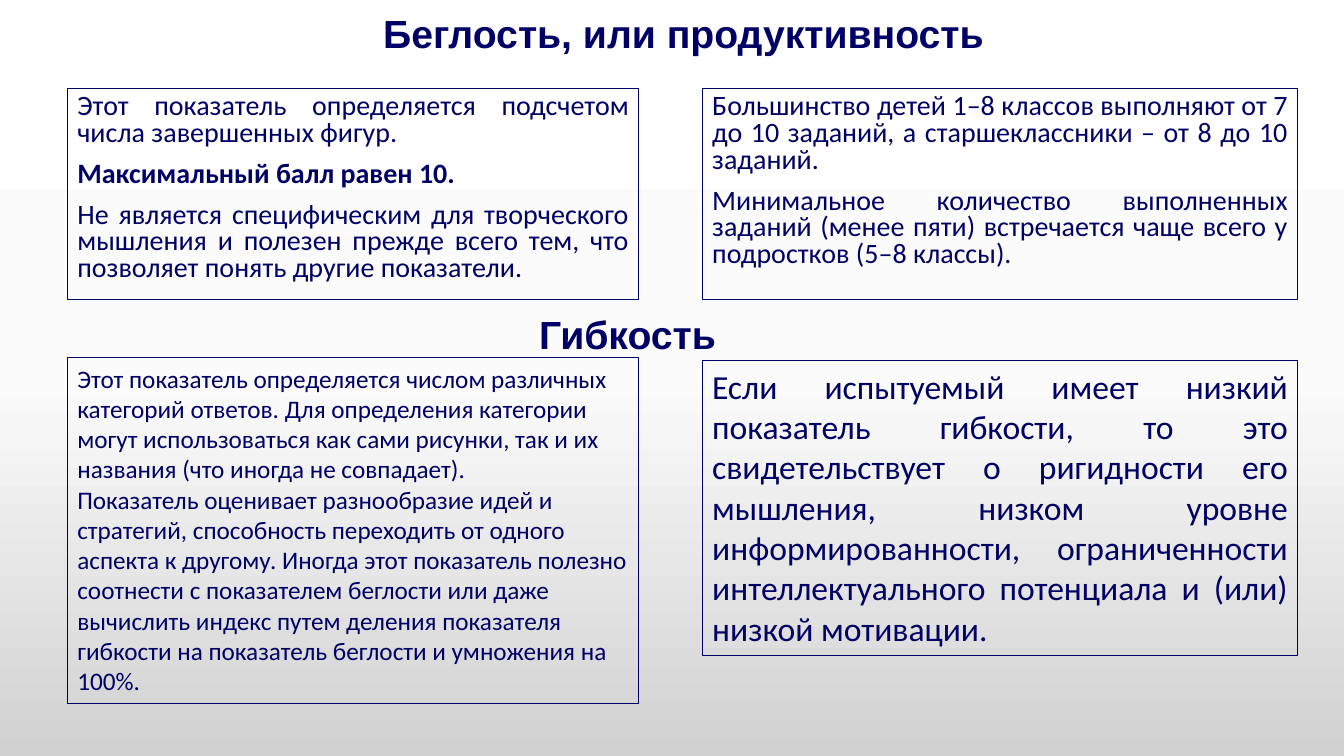
from copy import deepcopy

from pptx import Presentation
from pptx.dml.color import RGBColor
from pptx.enum.shapes import MSO_SHAPE
from pptx.enum.text import MSO_ANCHOR, PP_ALIGN
from pptx.oxml.ns import qn
from pptx.util import Cm, Pt

COLORS = {"navy": "000066", "top": "FFFFFF", "middle": "FBFBFB", "bottom": "D1D1D1"}
LEFT_COLUMN = (1.7, 14.4)
RIGHT_COLUMN = (17.7, 15.01)

FLUENCY_SCORE = [
    [("Этот показатель определяется подсчетом числа завершенных фигур.", False)],
    [("Максимальный балл равен 10.", True)],
    [("Не является специфическим для творческого мышления и полезен прежде всего тем, "
      "что позволяет понять другие показатели.", False)],
]
FLUENCY_NORMS = [
    [("Большинство детей 1–8 классов выполняют от 7 до 10 заданий, "
      "а старшеклассники – от 8 до 10 заданий.", False)],
    [("Минимальное количество выполненных заданий (менее пяти) встречается чаще всего "
      "у подростков (5–8 классы).", False)],
]
FLEXIBILITY_SCORE = [
    [("Этот показатель определяется числом различных категорий ответов. Для определения "
      "категории могут использоваться как сами рисунки, так и их названия "
      "(что иногда не совпадает).", False)],
    [("Показатель оценивает разнообразие идей и стратегий, способность переходить от одного "
      "аспекта к другому. Иногда этот показатель полезно соотнести с показателем беглости "
      "или даже вычислить индекс путем деления показателя гибкости на показатель беглости "
      "и умножения на 100%.", False)],
]
FLEXIBILITY_NORMS = [
    [("Если испытуемый имеет низкий показатель гибкости, то это свидетельствует о ригидности "
      "его мышления, низком уровне информированности, ограниченности интеллектуального "
      "потенциала и (или) низкой мотивации.", False)],
]


class SlideBuilder:
    """Hold the current slide and its shared style."""

    def __init__(self, page):
        """Keep the page, the text colour and the fonts."""
        self.page = page
        self.ink = RGBColor.from_string(COLORS["navy"])
        self.heading_font = "Arial"
        self.body_font = "Calibri"

    def background(self, names):
        """Fill the page with evenly spaced colours from top to bottom."""
        fill = self.page.background.fill
        fill.gradient()
        fill.gradient_angle = 270
        stop_list = self.page.element.find(".//" + qn("a:gsLst"))
        for _ in range(len(names) - len(stop_list)):
            stop_list.append(deepcopy(stop_list[-1]))
        for index, (stop, name) in enumerate(zip(fill.gradient_stops, names)):
            stop.position = index / (len(names) - 1)
            stop.color.rgb = RGBColor.from_string(COLORS[name])

    def add_text(self, frame, paragraphs, font, size, align, spacing=None, before=0):
        """Put styled paragraphs into a text frame."""
        frame.word_wrap = True
        frame.vertical_anchor = MSO_ANCHOR.TOP
        for index, spans in enumerate(paragraphs):
            para = frame.add_paragraph() if index else frame.paragraphs[0]
            para.alignment = align
            para.line_spacing = spacing
            para.space_before = Pt(before)
            for text, bold in spans:
                span = para.add_run()
                span.text = text
                span.font.name = font
                span.font.size = Pt(size)
                span.font.bold = bold
                span.font.color.rgb = self.ink

    def title(self, text, left, top, width, height):
        """Place the slide title."""
        box = self.page.shapes.title
        box.left, box.top, box.width, box.height = map(Cm, (left, top, width, height))
        box.text_frame.margin_top = 0
        self.add_text(box.text_frame, [[(text, True)]], self.heading_font, 28,
                      PP_ALIGN.CENTER, 0.9)

    def heading(self, text, left, top, width, height):
        """Add a centred heading inside the slide."""
        box = self.page.shapes.add_textbox(*map(Cm, (left, top, width, height)))
        self.add_text(box.text_frame, [[(text, True)]], self.heading_font, 28, PP_ALIGN.CENTER)

    def panel(self, paragraphs, column, top, height, size, align=PP_ALIGN.JUSTIFY, **rhythm):
        """Add an outlined text panel in a column."""
        left, width = column
        box = self.page.shapes.add_shape(
            MSO_SHAPE.RECTANGLE, *map(Cm, (left, top, width, height)))
        box.shadow.inherit = False
        box.fill.background()
        box.line.color.rgb = self.ink
        box.line.width = Pt(0.75)
        self.add_text(box.text_frame, paragraphs, self.body_font, size, align, **rhythm)


def main():
    """Build and save the slide."""
    deck = Presentation()
    deck.slide_width, deck.slide_height = Cm(33.87), Cm(19.05)
    builder = SlideBuilder(deck.slides.add_slide(deck.slide_layouts[5]))
    builder.background(["top", "middle", "bottom"])
    builder.title("Беглость, или продуктивность", 2.62, 0.36, 29.21, 2.13)
    tight = {"spacing": 0.8, "before": 10}
    builder.panel(FLUENCY_SCORE, LEFT_COLUMN, 2.24, 5.3, 20, **tight)
    builder.panel(FLUENCY_NORMS, RIGHT_COLUMN, 2.24, 5.3, 20, **tight)
    builder.heading("Гибкость", 11.05, 7.7, 9.53, 2.64)
    builder.panel(FLEXIBILITY_SCORE, LEFT_COLUMN, 9.02, 8.71, 18, PP_ALIGN.LEFT)
    builder.panel(FLEXIBILITY_NORMS, RIGHT_COLUMN, 9.09, 7.44, 24)
    deck.save("out.pptx")


if __name__ == "__main__":
    main()
